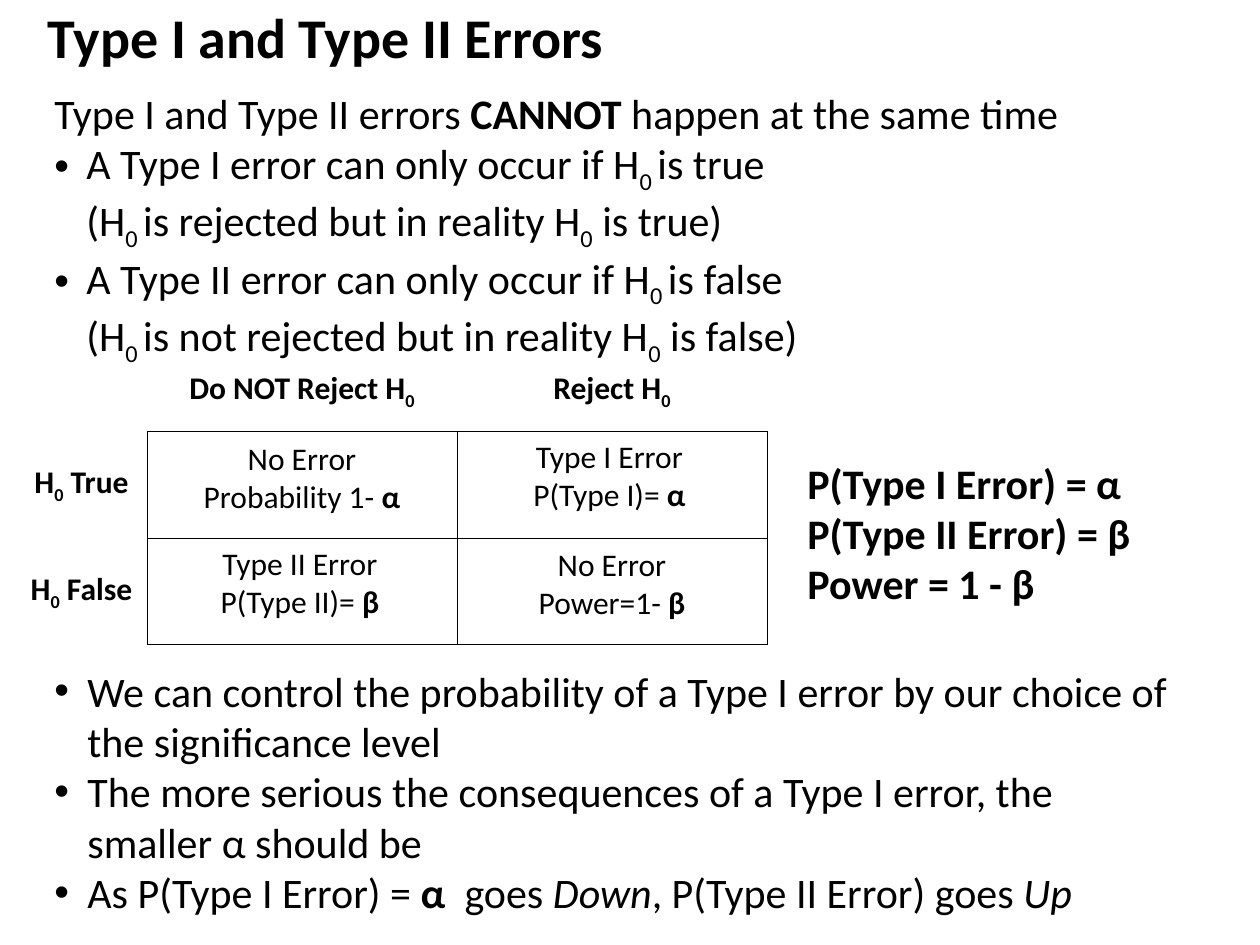
"""Build a slide on Type I and Type II errors."""
import pptx
import pptx.dml.color
import pptx.enum.text
import pptx.oxml
import pptx.oxml.ns
import pptx.util

PX = 914400 / 126
FONT = "Calibri"
BLACK = pptx.dml.color.RGBColor(0, 0, 0)
ALIGN = pptx.enum.text.PP_ALIGN
MIDDLE = pptx.enum.text.MSO_ANCHOR.MIDDLE
SUB_0 = ("0", "sub")
SUB_0_SPACE = ("0 ", "sub")

HEADERS = [
    (0, 1, ["Do NOT Reject H", SUB_0]),
    (0, 2, ["Reject H", SUB_0]),
    (1, 0, ["H", SUB_0, " True"]),
    (2, 0, ["H", SUB_0, " False"]),
]
OUTCOMES = [
    ((179, 433, 246, 89), [["No Error"], ["Probability 1-", (" α", "bold")]]),
    ((525, 539, 174, 89), [["No Error\nPower=1- ", ("β", "bold")]]),
    ((520, 431, 179, 89), [["Type I Error"], ["P(Type I)=", (" α", "bold")]]),
    ((207, 538, 186, 89), [["Type II Error"], ["P(Type II)= ", ("β", "bold")]]),
]
PROBABILITIES = [["P(Type I Error) = α"], ["P(Type II Error) = β"], ["Power = 1 - β"]]
INTRO = [
    ["Type I and Type II errors ", ("CANNOT ", "bold"), "happen at the same time"],
    ["A Type I error can only occur if H", SUB_0_SPACE, "is true\n(H", SUB_0_SPACE,
     "is rejected but in reality H", SUB_0, " is true)"],
    ["A Type II error can only occur if H", SUB_0_SPACE, "is false\n(H", SUB_0_SPACE,
     "is not rejected but in reality H", SUB_0, " is false)"],
]
CONCLUSIONS = [
    ["We can control the probability of a Type I error by our choice of the significance level"],
    ["The more serious the consequences of a Type I error, the smaller α should be"],
    ["As P(Type I Error) = ", ("α  ", "bold"), "goes ", ("Down", "italic"),
     ", P(Type II Error) goes ", ("Up", "italic")],
]


def px(n):
    """Convert pixels to EMU."""
    return pptx.util.Emu(round(n * PX))


def place(sp, box):
    """Move and size a shape."""
    sp.left, sp.top, sp.width, sp.height = map(px, box)


def add_run(p, text, size, bold, style=""):
    """Add one formatted run."""
    r = p.add_run()
    r.text = text
    font = r.font
    font.name, font.size = FONT, pptx.util.Pt(size)
    font.color.rgb = BLACK
    font.bold = bold or style == "bold"
    font.italic = style == "italic"
    if style == "sub":
        r._r.get_or_add_rPr().set("baseline", "-25000")


def fill_paragraph(p, pieces, size, bold=False, align=ALIGN.LEFT):
    """Write plain or styled pieces into a paragraph, breaking at newlines."""
    p.alignment = align
    for piece in pieces:
        text, style = (piece, "") if isinstance(piece, str) else piece
        for i, line in enumerate(text.split("\n")):
            if i:
                p.add_line_break()
            add_run(p, line, size, bold, style)


def set_bullet(p, indent, hang):
    """Give a paragraph a hanging round bullet."""
    pPr = p._p.get_or_add_pPr()
    pPr.set("marL", str(px(indent)))
    pPr.set("indent", str(-px(hang)))
    ns = pptx.oxml.ns.nsdecls("a")
    pPr.append(pptx.oxml.parse_xml(f'<a:buFont {ns} typeface="Arial"/>'))
    pPr.append(pptx.oxml.parse_xml(f'<a:buChar {ns} char="•"/>'))


def add_text(s, box, paragraphs, size, bold=False, align=ALIGN.LEFT, wrap=True,
             bullets_from=None, indent=33, hang=33):
    """Add a text box, bulleted from a given paragraph on."""
    tf = s.shapes.add_textbox(*map(px, box)).text_frame
    tf.word_wrap = wrap
    tf.auto_size = pptx.enum.text.MSO_AUTO_SIZE.SHAPE_TO_FIT_TEXT
    for i, pieces in enumerate(paragraphs):
        p = tf.add_paragraph() if i else tf.paragraphs[0]
        fill_paragraph(p, pieces, size, bold, align)
        if bullets_from is not None and i >= bullets_from:
            set_bullet(p, indent, hang)


def add_title(s, text):
    """Format the title placeholder."""
    sp = s.shapes.title
    place(sp, (35, 0, 1183, 81))
    tf = sp.text_frame
    tf.vertical_anchor = MIDDLE
    tf.auto_size = pptx.enum.text.MSO_AUTO_SIZE.NONE
    p = tf.paragraphs[0]
    p.line_spacing = 0.9
    fill_paragraph(p, [text], 32, bold=True)


def set_borders(cell, sides):
    """Draw thin black lines on the given sides and none on the others."""
    tcPr = cell._tc.get_or_add_tcPr()
    ns = pptx.oxml.ns.nsdecls("a")
    for i, side in enumerate("LRTB"):
        paint = f'<a:solidFill><a:srgbClr val="{BLACK}"/></a:solidFill>' if side in sides else "<a:noFill/>"
        tcPr.insert(i, pptx.oxml.parse_xml(f'<a:ln{side} {ns} w="6350">{paint}</a:ln{side}>'))


def add_decision_table(s):
    """Add the table of decisions against reality."""
    table = s.shapes.add_table(3, 3, px(16), px(350), px(751), px(295)).table
    table.first_row = table.horz_banding = False
    for column, width in zip(table.columns, (131, 310, 310)):
        column.width = px(width)
    for row, height in zip(table.rows, (81, 107, 107)):
        row.height = px(height)
    for r in range(3):
        for c in range(3):
            cell = table.cell(r, c)
            cell.fill.background()
            set_borders(cell, ("LT" if r and c else "") + ("R" if r else "") + ("B" if c else ""))
    for r, c, pieces in HEADERS:
        cell = table.cell(r, c)
        cell.vertical_anchor = MIDDLE
        cell.margin_left = cell.margin_right = cell.margin_top = px(1)
        cell.margin_bottom = 0
        fill_paragraph(cell.text_frame.paragraphs[0], pieces, 18, True, ALIGN.CENTER)


def main():
    """Build and save the slide."""
    prs = pptx.Presentation()
    prs.slide_width, prs.slide_height = px(1260), px(945)
    s = prs.slides.add_slide(prs.slide_layouts[5])
    add_title(s, "Type I and Type II Errors")
    add_decision_table(s)
    for box, paragraphs in OUTCOMES:
        add_text(s, box, paragraphs, 18, align=ALIGN.CENTER, wrap=box[2] > 200)
    add_text(s, (795, 451, 425, 165), PROBABILITIES, 24, bold=True)
    add_text(s, (42, 81, 1191, 267), INTRO, 24, bullets_from=1, indent=32, hang=39)
    add_text(s, (42, 659, 1139, 267), CONCLUSIONS, 24, bullets_from=0)
    prs.save("out.pptx")


if __name__ == "__main__":
    main()
